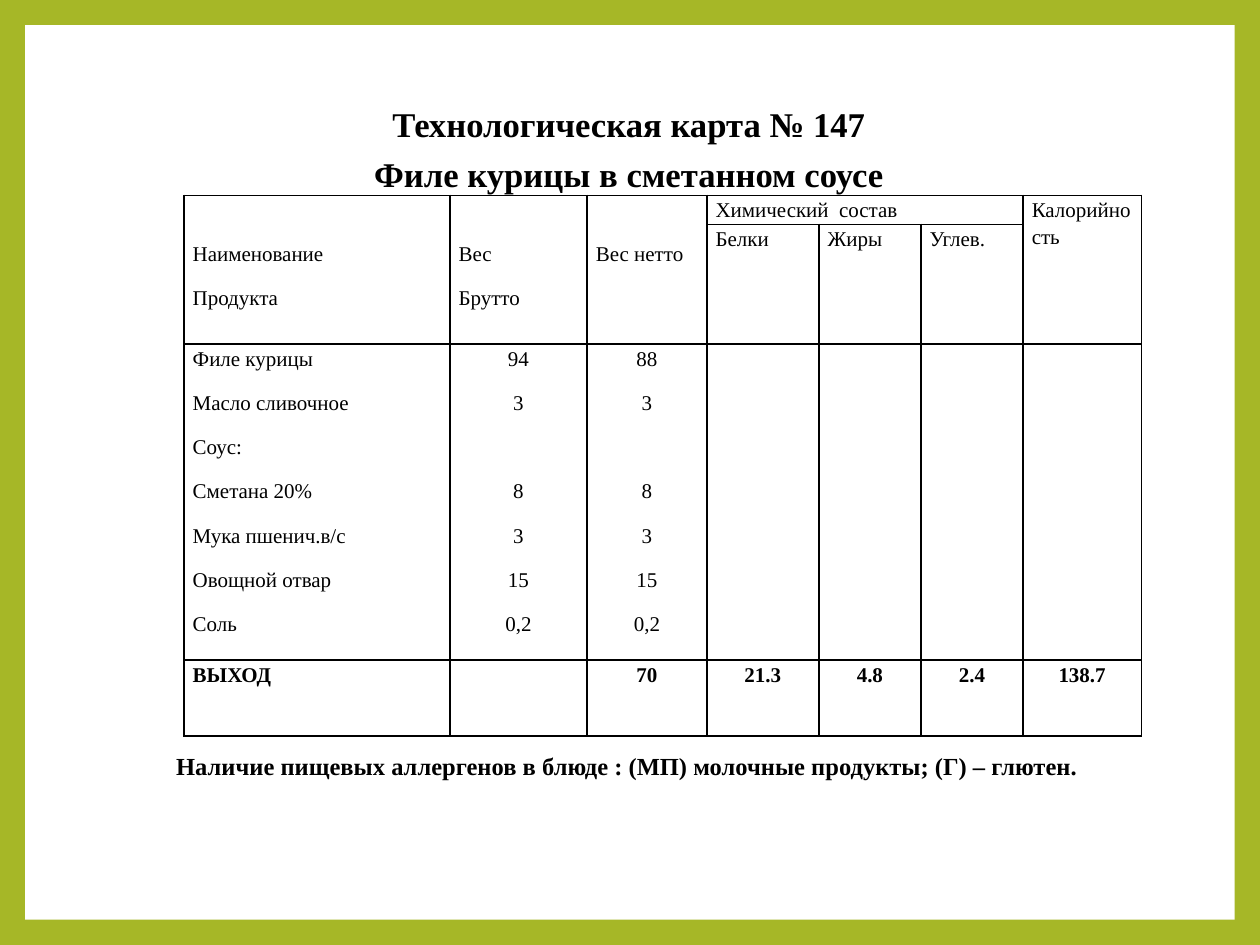
"""Build a slide with the recipe card of a chicken dish."""
from dataclasses import dataclass

from lxml import etree
from pptx import Presentation
from pptx import util as u
from pptx.dml.color import RGBColor
from pptx.enum import shapes, text
from pptx.oxml import ns

WIDTH, HEIGHT = u.Inches(10), u.Inches(7.5)
COLORS = {"frame": "A6B727", "paper": "FFFFFF", "ink": "000000"}
FONT = "Times New Roman"
LEFT, CENTER = text.PP_ALIGN.LEFT, text.PP_ALIGN.CENTER
COLUMNS = (2.11, 1.09, 0.95, 0.89, 0.81, 0.81, 0.94)
ROWS = (0.22, 0.92, 2.51, 0.6)
HEADER_DROP = 0.35
SKIPPED_LINE = 35.3


@dataclass(frozen=True)
class Area:
    """A rectangle in shares of the slide's size."""
    left: float
    top: float
    width: float
    height: float

    def box(self) -> tuple[int, ...]:
        return (int(self.left * WIDTH), int(self.top * HEIGHT),
                int(self.width * WIDTH), int(self.height * HEIGHT))


@dataclass(frozen=True)
class Entry:
    """The text of a table cell at a row and column of the grid."""
    row: int
    column: int
    lines: tuple[str, ...]
    row_span: int = 1
    column_span: int = 1
    align: int = LEFT
    bold: bool = False
    drop: float = 0
    gap_after: int = -1


def amounts(column: int, first: str) -> Entry:
    return Entry(2, column, (first, "3", "8", "3", "15", "0,2"),
                 align=CENTER, gap_after=1)


ENTRIES = (
    Entry(0, 0, ("Наименование", "Продукта"), row_span=2, drop=HEADER_DROP),
    Entry(0, 1, ("Вес", "Брутто"), row_span=2, drop=HEADER_DROP),
    Entry(0, 2, ("Вес нетто",), row_span=2, drop=HEADER_DROP),
    Entry(0, 3, ("Химический  состав",), column_span=3),
    Entry(0, 6, ("Калорийность",), row_span=2),
    *(Entry(1, column, (name,))
      for column, name in enumerate(("Белки", "Жиры", "Углев."), 3)),
    Entry(2, 0, ("Филе курицы", "Масло сливочное", "Соус:", "Сметана 20%",
                 "Мука пшенич.в/с", "Овощной отвар", "Соль")),
    amounts(1, "94"),
    amounts(2, "88"),
    Entry(3, 0, ("ВЫХОД",), bold=True),
    *(Entry(3, column, (value,), align=CENTER, bold=True)
      for column, value in enumerate(("70", "21.3", "4.8", "2.4", "138.7"), 2)),
)


def write(frame, lines: tuple[str, ...], *, size: float = 12, bold: bool = False,
          align: int = LEFT, spacing: float = 1.15, after: float = 10,
          gap_after: int = -1) -> None:
    for index, line in enumerate(lines):
        paragraph = frame.paragraphs[0] if index == 0 else frame.add_paragraph()
        paragraph.alignment, paragraph.line_spacing = align, spacing
        paragraph.space_before = u.Pt(0)
        paragraph.space_after = u.Pt(SKIPPED_LINE if index == gap_after else after)
        run = paragraph.add_run()
        run.text = line
        run.font.name, run.font.size, run.font.bold = FONT, u.Pt(size), bold
        run.font.color.rgb = RGBColor.from_string(COLORS["ink"])


def add_text(slide, area: Area, lines: tuple[str, ...], **style):
    frame = slide.shapes.add_textbox(*area.box()).text_frame
    frame.word_wrap = True
    write(frame, lines, **style)
    return frame


def format_cell(cell) -> None:
    cell.margin_left = cell.margin_right = u.Inches(0.07)
    cell.margin_top = cell.margin_bottom = 0
    properties = cell._tc.get_or_add_tcPr()
    for side in ("a:lnL", "a:lnR", "a:lnT", "a:lnB"):
        line = etree.SubElement(properties, ns.qn(side), w=str(u.Pt(1)))
        fill = etree.SubElement(line, ns.qn("a:solidFill"))
        etree.SubElement(fill, ns.qn("a:srgbClr"), val=COLORS["ink"])
    cell.fill.background()


def add_recipe_table(slide, area: Area) -> None:
    shape = slide.shapes.add_table(len(ROWS), len(COLUMNS), *area.box())
    table = shape.table
    table.first_row = table.horz_banding = False
    for column, width in zip(table.columns, COLUMNS):
        column.width = u.Inches(width)
    for row, height in zip(table.rows, ROWS):
        row.height = u.Inches(height)
    for cell in table.iter_cells():
        format_cell(cell)
    for entry in ENTRIES:
        cell = table.cell(entry.row, entry.column)
        if entry.row_span > 1 or entry.column_span > 1:
            cell.merge(table.cell(entry.row + entry.row_span - 1,
                                  entry.column + entry.column_span - 1))
        cell.margin_top = u.Inches(entry.drop)
        write(cell.text_frame, entry.lines, bold=entry.bold, align=entry.align,
              gap_after=entry.gap_after)
    for cell in table.iter_cells():
        if not cell.text_frame.text:
            etree.SubElement(cell.text_frame.paragraphs[0]._p,
                             ns.qn("a:endParaRPr"), sz="1200")


def main() -> None:
    presentation = Presentation()
    presentation.slide_width, presentation.slide_height = WIDTH, HEIGHT
    slide = presentation.slides.add_slide(presentation.slide_layouts[6])
    background = slide.background.fill
    background.solid()
    background.fore_color.rgb = RGBColor.from_string(COLORS["frame"])

    paper = slide.shapes.add_shape(shapes.MSO_SHAPE.RECTANGLE,
                                   *Area(0.02, 0.2 / 7.5, 0.96, 7.1 / 7.5).box())
    paper.shadow.inherit = False
    paper.fill.solid()
    paper.fill.fore_color.rgb = RGBColor.from_string(COLORS["paper"])
    paper.line.fill.background()

    title = add_text(slide, Area(0.094, 0.1, 0.81, 0.1),
                     ("Технологическая карта № 147", "Филе курицы в сметанном соусе"),
                     size=19.8, bold=True, align=CENTER, spacing=1.2, after=0)
    title.margin_top = title.margin_bottom = 0
    add_recipe_table(slide, Area(0.146, 1.55 / 7.5, 0.758, sum(ROWS) / 7.5))
    add_text(slide, Area(0.13, 5.88 / 7.5, 0.81, 0.35 / 7.5),
             ("Наличие пищевых аллергенов в блюде : (МП) молочные продукты; "
              "(Г) – глютен.",), size=14, bold=True)
    presentation.save("out.pptx")


if __name__ == "__main__":
    main()
